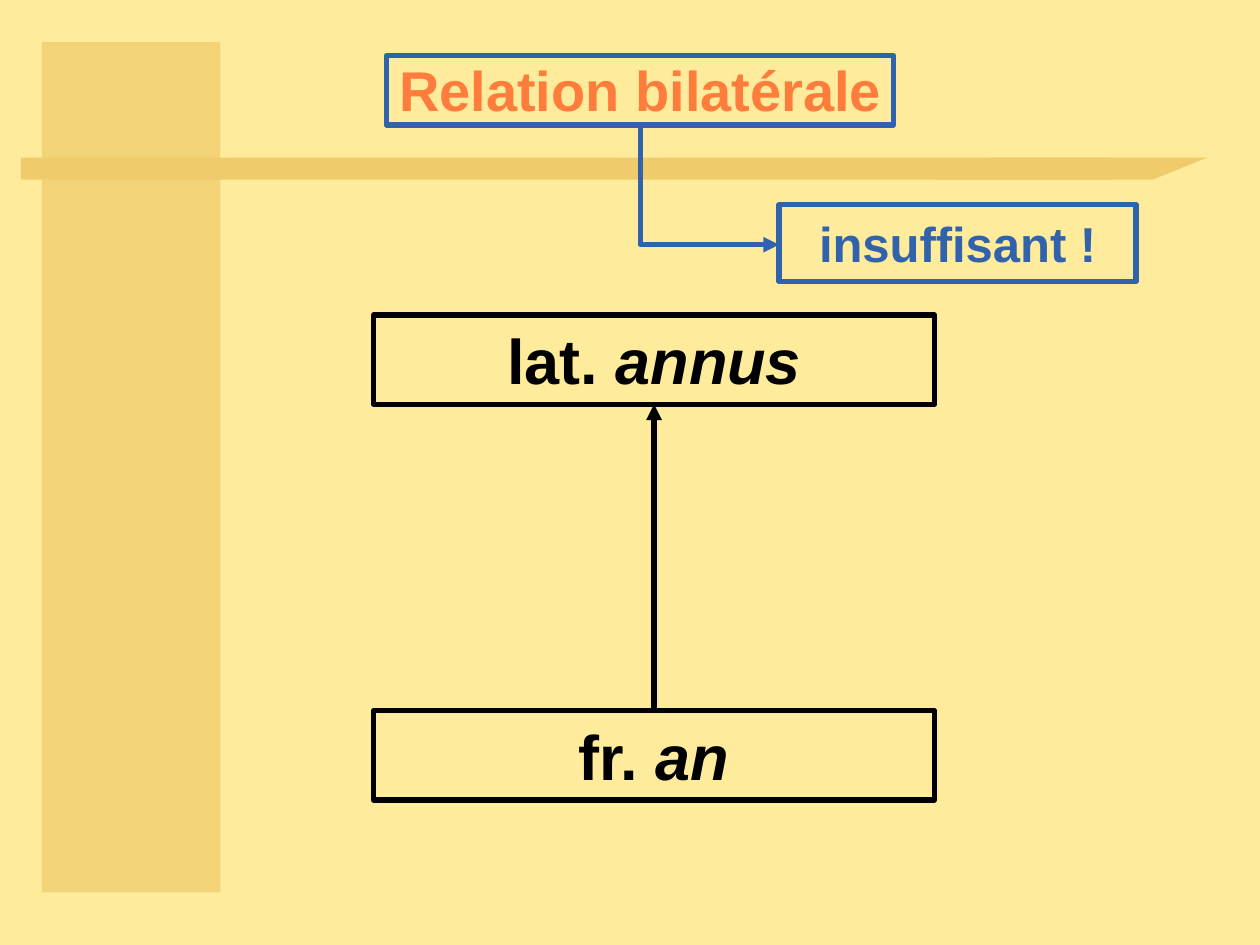
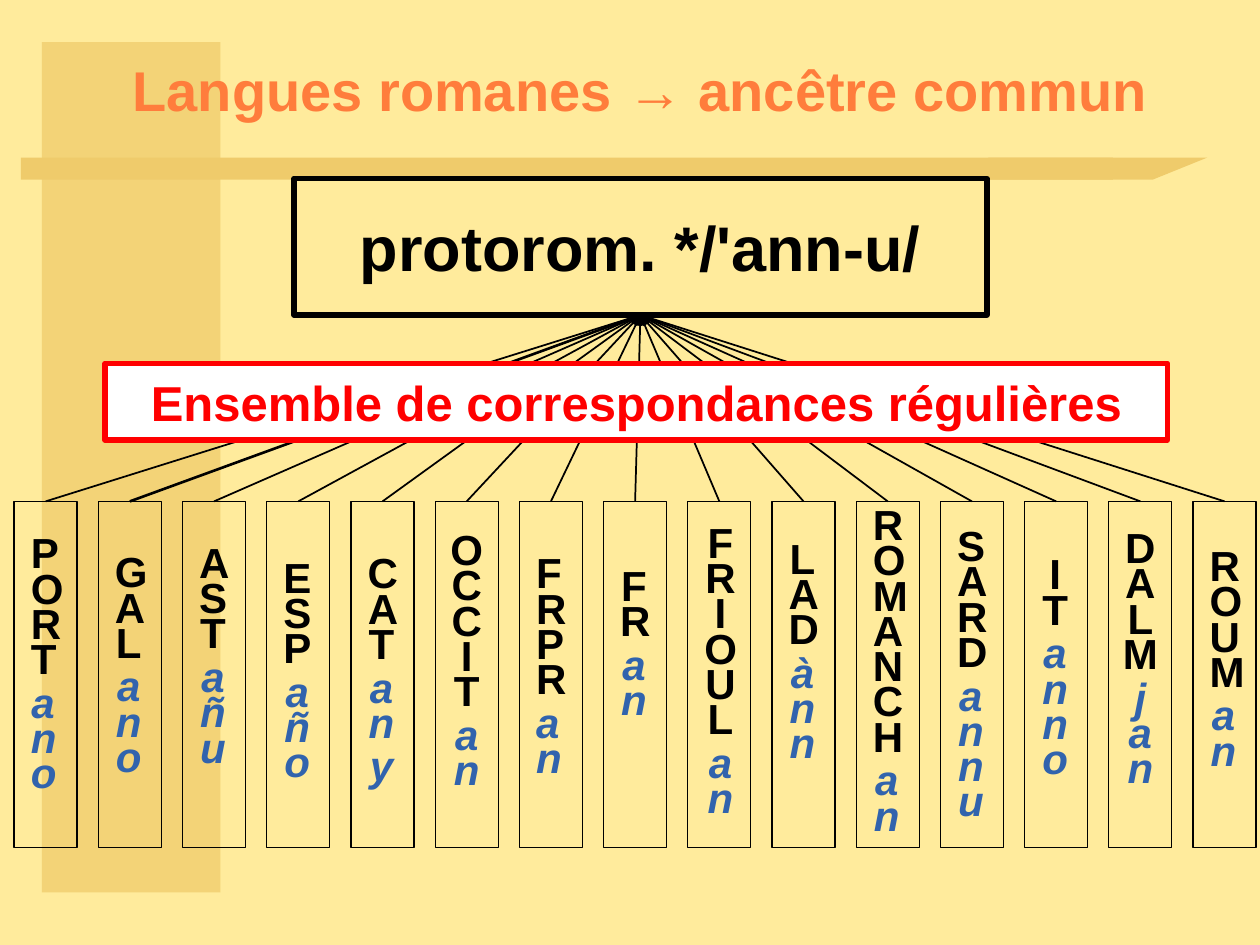
import pptx
import pptx.util
import pptx.dml.color
import pptx.enum.shapes
import pptx.enum.text
import pptx.oxml
import pptx.oxml.ns

Kind = pptx.enum.shapes.MSO_SHAPE
Link = pptx.enum.shapes.MSO_CONNECTOR
Fit = pptx.enum.text.MSO_AUTO_SIZE
Mid = pptx.enum.text.MSO_ANCHOR.MIDDLE
Pt = pptx.util.Pt
hue = {name: pptx.dml.color.RGBColor.from_string(code) for name, code in {
    "page": "FFEB9C", "band": "EFCB6B", "title": "FF7D3C", "ink": "000000",
    "blue": "3163AD", "red": "FF0000", "white": "FFFFFF"}.items()}

deck = pptx.Presentation()
deck.slide_width = pptx.util.Inches(10)
deck.slide_height = pptx.util.Inches(7.5)
# Grid of 120 columns by 90 rows: both have the same step
step = deck.slide_width / 120


def box(slide, area, runs=(), size=36, edge=None, weight=3, fill=None, tone=None, kind=Kind.RECTANGLE):
    """Add a shape at grid area (column, row, columns, rows) with centred runs."""
    shape = slide.shapes.add_shape(kind, *(round(n * step) for n in area))
    shape.shadow.inherit = False
    if fill:
        shape.fill.solid()
        shape.fill.fore_color.rgb = hue[fill]
    else:
        shape.fill.background()
    if edge:
        shape.line.color.rgb = hue[edge]
        shape.line.width = Pt(weight)
    else:
        shape.line.fill.background()
    for text, slant in runs:
        write(shape.text_frame.paragraphs[0], text, size, tone or edge, slant)
    return shape


def write(para, text, size, tone, slant=False):
    """Add one bold, centred run to a paragraph."""
    para.alignment = pptx.enum.text.PP_ALIGN.CENTER
    run = para.add_run()
    run.text = text
    run.font.name = "Arial"
    run.font.size = Pt(size)
    run.font.bold = True
    run.font.italic = slant
    run.font.color.rgb = hue[tone]


# Shared layout: page colour, title place, bands
plan = deck.slide_layouts[5]
plan.background.fill.solid()
plan.background.fill.fore_color.rgb = hue["page"]
head = plan.placeholders[0]
head.left, head.top, head.width, head.height = (round(n * step) for n in (10, 5, 102, 7))
pair, fan = [deck.slides.add_slide(plan) for _ in range(2)]

bands = [box(pair, (4, 4, 17, 81), fill="band"),
         box(pair, (89, 15, 26, 2.1), fill="band", kind=Kind.FLOWCHART_DATA),
         box(pair, (2, 15, 104, 2.1), fill="band")]
tint = bands[0].fill._xPr.find(".//" + pptx.oxml.ns.qn("a:srgbClr"))
pptx.oxml.ns.qn("a:alpha")
tint.append(pptx.oxml.parse_xml(
    f'<a:alpha {pptx.oxml.ns.nsdecls("a")} val="75000"/>'))
for n, band in enumerate(bands):
    plan.shapes._spTree.insert(2 + n, band._element)

# Titles
for slide, text in ((pair, "Relation bilatérale"),
                    (fan, "Langues romanes → ancêtre commun")):
    frame = slide.shapes.title.text_frame
    frame.auto_size = Fit.NONE
    frame.vertical_anchor = Mid
    write(frame.paragraphs[0], text, 32, "title")

# Slide 1: two linked words and a warning
latin = box(pair, (35.6, 30, 53.4, 8.5), [("lat. ", False), ("annus", True)], edge="ink")
french = box(pair, (35.6, 67.7, 53.4, 8.5), [("fr. ", False), ("an", True)], edge="ink")
box(pair, (74.2, 19.5, 34, 7.3), [("insuffisant !", False)], 28, edge="blue")
box(pair, (36.8, 5.3, 48.3, 6.6), edge="blue")

stem = pair.shapes.add_connector(Link.STRAIGHT, 0, 0, 0, 0)
stem.begin_connect(french, 0)
stem.end_connect(latin, 2)
# The elbow is a quarter-turned frame: down first, then right
bend = pair.shapes.add_connector(
    Link.ELBOW, *(round(n * step) for n in (73.2, 11.1, 62, 24.3)))
bend._element.spPr.xfrm.set("rot", "16200000")
bend._element.spPr.prstGeom.set("prst", "bentConnector2")
links = [(stem, "ink", 3), (bend, "blue", 3)]

# Slide 2: root word above fifteen language columns
root = box(fan, (28, 17, 66, 13), [("protorom. */'ann-u/", False)], edge="ink")
root.text_frame.word_wrap = False

# Text ("/" new part, "|" next line), top row and width of each label
tongues = [
    ("PORT/ano", 50.9, 4.7), ("GAL/ano", 52.7, 5), ("AST/añu", 51.8, 5),
    ("ESP/año", 53.2, 5), ("CAT/an/y", 52.8, 5), ("OCCI|T/an", 50.6, 6),
    ("FRPR/an", 52.8, 4), ("FR/an", 54, 5), ("FRIOUL/an", 49.9, 5.4),
    ("LAD/ànn", 51.4, 5), ("ROMANCH/an", 48.2, 5), ("SARD/annu", 50.2, 5),
    ("IT/anno", 52.9, 5), ("DALM/j|an", 50.4, 6), ("ROUM/an", 52.1, 5)]
for n, (text, top, wide) in enumerate(tongues):
    left = 1.35 + 8.02 * n
    slot = box(fan, (left, 47.75, 6, 33), edge="ink", weight=0.75)
    count = sum(c.isalpha() for c in text)
    inset = 0.4 if wide < 6 else 0
    label = fan.shapes.add_textbox(*(round(v * step) for v in (
        left + inset, top, wide, 2.2 + 3.36 * count)))
    frame = label.text_frame
    frame.word_wrap = True
    para = frame.paragraphs[0]
    for p, part in enumerate(text.split("/")):
        for q, piece in enumerate(part.split("|")):
            if p or q:
                para = frame.add_paragraph()
            para.line_spacing = 0.7
            para.space_before = Pt(4.8 if p and not q else 0)
            write(para, piece, 24, "blue" if p else "ink", p > 0)
    ray = fan.shapes.add_connector(Link.STRAIGHT, 0, 0, 0, 0)
    ray.begin_connect(slot, 0)
    ray.end_connect(root, 2)
    links.append((ray, "ink", 1.5 if n == 1 else 1))

box(fan, (10, 34.6, 101.2, 7.3), [("Ensemble de correspondances régulières", False)], 28,
    edge="red", fill="white")

# Line style and arrowheads
for link, tone, weight in links:
    link.line.color.rgb = hue[tone]
    link.line.width = Pt(weight)
    for home, tag in ((link.line._get_or_add_ln(), 'tailEnd type="triangle"'),
                      (link._element.spPr, "effectLst")):
        name, _, rest = tag.partition(" ")
        home.append(pptx.oxml.parse_xml(
            f'<a:{name} {pptx.oxml.ns.nsdecls("a")} {rest}/>'))

deck.save("out.pptx")
